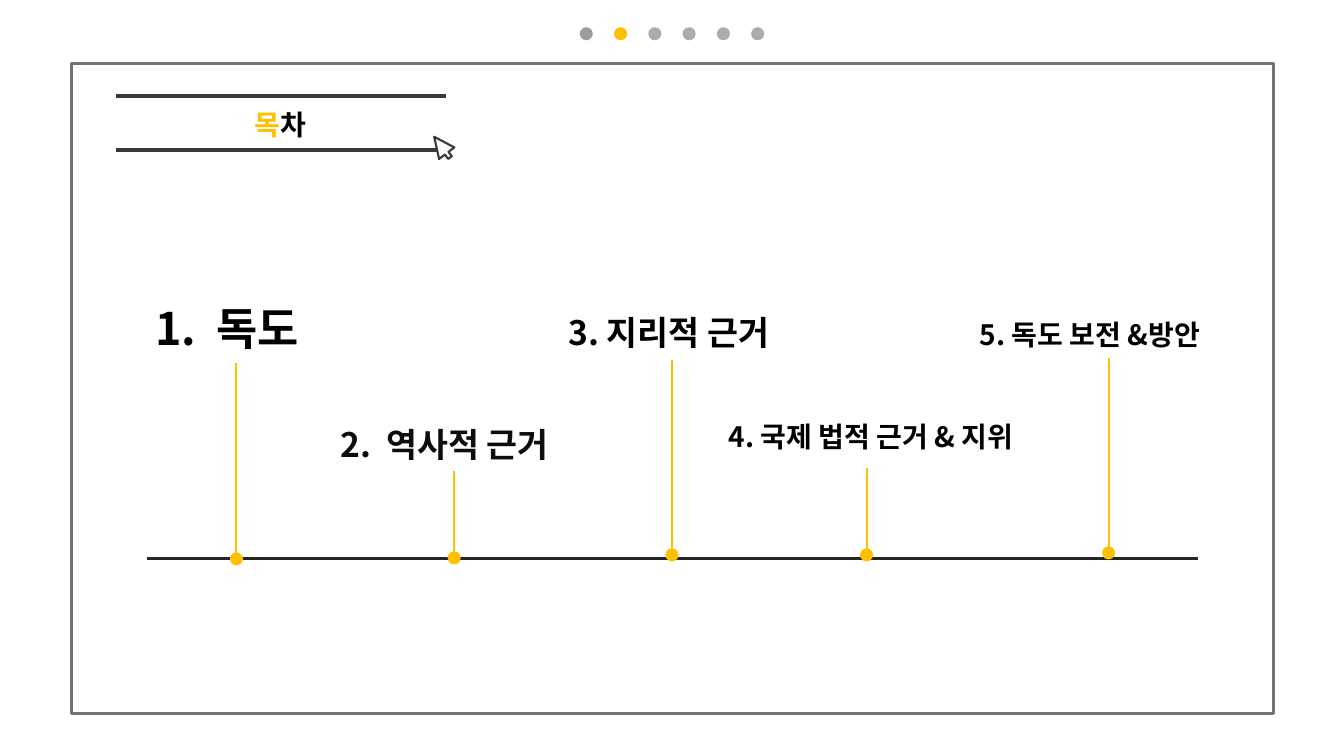
from lxml.etree import SubElement
from pptx import Presentation
from pptx.dml.color import RGBColor
from pptx.enum.shapes import MSO_CONNECTOR, MSO_SHAPE
from pptx.enum.text import MSO_AUTO_SIZE, PP_ALIGN
from pptx.oxml.ns import qn
from pptx.util import Inches, Pt

FONT = "Noto Sans CJK KR"
GOLD = RGBColor(0xFF, 0xC0, 0x00)
BLACK = RGBColor(0, 0, 0)
INK = RGBColor(0x0D, 0x0D, 0x0D)
RULE = RGBColor(0x3B, 0x38, 0x38)
AXIS = RGBColor(0x26, 0x26, 0x26)
FRAME = RGBColor(0x76, 0x71, 0x71)
GREY = RGBColor(0xAF, 0xAB, 0xAB)
DARK = RGBColor(0x9F, 0x9B, 0x9B)
PALE = RGBColor(0xFB, 0xFB, 0xFB)

DOT = 0.13
PAGES = [DARK, GOLD, GREY, GREY, GREY, GREY]
TITLE = [("목", GOLD), ("차", BLACK)]
# text, size, colour, box, wrap, dot left, dot top, stem top
TOPICS = [
    ("1.  독도", 32, BLACK, (1.44, 2.93, 1.8, 0.64), False, 2.28, 5.48, 3.6),
    ("2.  역사적 근거", 24, INK, (3.28, 4.16, 2.7, 0.5), True, 4.44, 5.47, 4.67),
    ("3. 지리적 근거", 24, BLACK, (5.54, 3.05, 2.39, 0.5), False, 6.6, 5.44, 3.57),
    ("4. 국제 법적 근거 & 지위", 20, BLACK, (7.13, 4.11, 3.33, 0.44), False, 8.53, 5.44, 4.64),
    ("5. 독도 보전 &방안", 20, BLACK, (9.62, 3.1, 2.62, 0.44), True, 10.93, 5.42, 3.55),
]

deck = Presentation()
deck.slide_width, deck.slide_height = Inches(13.33), Inches(7.5)
slide = deck.slides.add_slide(deck.slide_layouts[6])


def add_form(kind, box, fill=None, line=None, width=0):
    form = slide.shapes.add_shape(kind, *map(Inches, box))
    form.shadow.inherit = False
    if fill is None:
        form.fill.background()
    else:
        form.fill.solid()
        form.fill.fore_color.rgb = fill
    if line is None:
        form.line.fill.background()
    else:
        form.line.color.rgb = line
        form.line.width = Pt(width)
    return form


def add_dot(left, top, color):
    add_form(MSO_SHAPE.OVAL, (left, top, DOT, DOT), color)


def add_line(x1, y1, x2, y2, color, width):
    line = slide.shapes.add_connector(
        MSO_CONNECTOR.STRAIGHT, *map(Inches, (x1, y1, x2, y2)))
    line.line.color.rgb = color
    line.line.width = Pt(width)
    SubElement(line._element.spPr, qn("a:effectLst"))


def add_text(box, parts, size, wrap=False, align=PP_ALIGN.LEFT):
    """Add one line of bold text, made of (text, colour) parts."""
    frame = slide.shapes.add_textbox(*map(Inches, box)).text_frame
    frame.word_wrap = wrap
    frame.auto_size = MSO_AUTO_SIZE.SHAPE_TO_FIT_TEXT
    para = frame.paragraphs[0]
    para.alignment = align
    for text, color in parts:
        run = para.add_run()
        run.text = text
        style = {"name": FONT, "size": Pt(size), "bold": True}
        for key, value in style.items():
            setattr(run.font, key, value)
        run.font.color.rgb = color
        SubElement(run._r.get_or_add_rPr(), qn("a:ea"), typeface=FONT)


add_form(MSO_SHAPE.RECTANGLE, (0.71, 0.63, 11.92, 6.45), line=FRAME, width=2.25)
for i, color in enumerate(PAGES):
    add_dot(5.75 + 0.34 * i, 0.27, color)

for y in (0.95, 1.49):
    add_line(1.15, y, 4.42, y, RULE, 3)
add_text((2.4, 1.02, 0.76, 0.44), TITLE, 20, align=PP_ALIGN.CENTER)
cursor = add_form(MSO_SHAPE.UP_ARROW, (4.29, 1.33, 0.19, 0.26), PALE, RULE, 1.5)
cursor.rotation = 322.8
cursor.adjustments[0] = 0.234
cursor.adjustments[1] = 1.082

add_line(1.46, 5.54, 11.88, 5.54, AXIS, 2.25)
for text, size, color, box, wrap, left, top, head in TOPICS:
    mid = left + DOT / 2
    add_dot(left, top, GOLD)
    add_line(mid, head, mid, top + DOT, GOLD, 1.5)
    add_text(box, [(text, color)], size, wrap)

deck.save("out.pptx")
